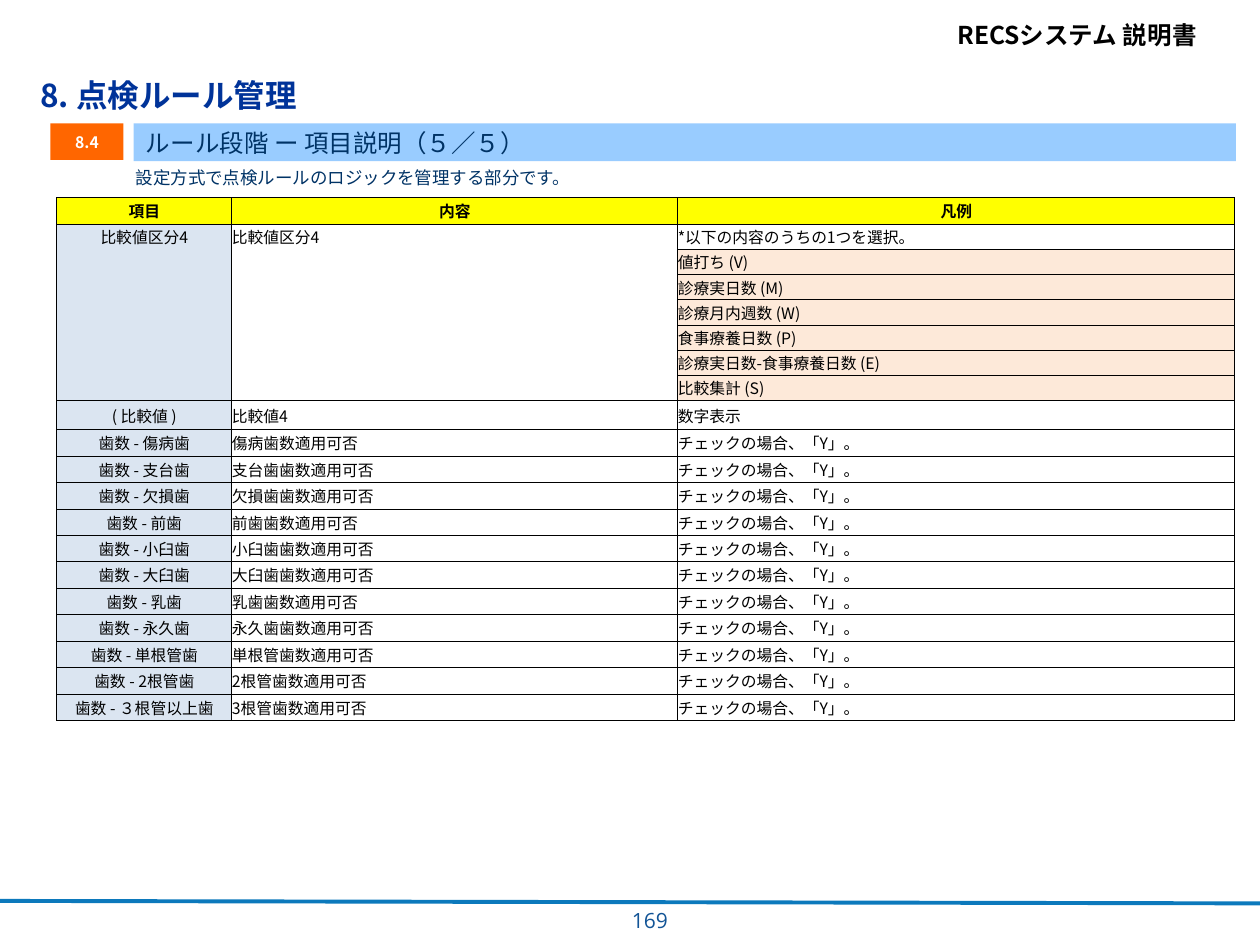
from lxml.etree import SubElement
from pptx import Presentation
from pptx.dml.color import RGBColor
from pptx.enum.shapes import MSO_CONNECTOR, MSO_SHAPE
from pptx.enum.text import MSO_ANCHOR as ANCHOR, MSO_AUTO_SIZE, PP_ALIGN as ALIGN
from pptx.oxml.ns import qn
from pptx.util import Inches, Pt

SANS, PAGE_FONT = "Noto Sans CJK JP", "Open Sans"
BLACK, WHITE = RGBColor(0, 0, 0), RGBColor(255, 255, 255)
NAVY, INK = RGBColor(0x00, 0x33, 0x99), RGBColor(0x00, 0x33, 0x66)
RULE, PAGE = RGBColor(0x0C, 0x79, 0xBC), RGBColor(0x12, 0x54, 0x96)
ORANGE, SKY = RGBColor(0xFF, 0x66, 0x00), RGBColor(0x99, 0xCC, 0xFF)
YELLOW, PALE = RGBColor(0xFF, 0xFF, 0x00), RGBColor(0xDB, 0xE5, 0xF1)
PEACH = RGBColor(0xFD, 0xE9, 0xD9)

HEAD = ("項目", "内容", "凡例")
CHOICES = ["値打ち (V)", "診療実日数 (M)", "診療月内週数 (W)", "食事療養日数 (P)",
           "診療実日数-食事療養日数 (E)", "比較集計 (S)"]
TEETH = [
    ("傷病歯", "傷病歯数"), ("支台歯", "支台歯歯数"), ("欠損歯", "欠損歯歯数"),
    ("前歯", "前歯歯数"), ("小臼歯", "小臼歯歯数"), ("大臼歯", "大臼歯歯数"),
    ("乳歯", "乳歯歯数"), ("永久歯", "永久歯歯数"), ("単根管歯", "単根管歯数"),
    ("2根管歯", "2根管歯数"), ("３根管以上歯", "3根管歯数"),
]
ROWS = [HEAD, ("比較値区分4", "比較値区分4", "*以下の内容のうちの1つを選択。")]
ROWS += [("", "", choice) for choice in CHOICES]
ROWS += [("( 比較値 )", "比較値4", "数字表示")]
ROWS += [(f"歯数 - {tooth}", f"{count}適用可否", "チェックの場合、「Y」。")
         for tooth, count in TEETH]
COLS = (1.39, 3.54, 4.42)
LAST = 1 + len(CHOICES)  # last row of the group of choices
HIGH = [0.21] + [0.2] * LAST + [0.23] + [0.21] * len(TEETH)


def write(frame, text, size, color, bold=False, align=ALIGN.LEFT, font=SANS):
    frame.text = text
    para = frame.paragraphs[0]
    para.alignment = align
    for run in para.runs:
        run.font.size, run.font.bold, run.font.name = Pt(size), bold, font
        run.font.color.rgb = color
        SubElement(run.font._element, qn("a:ea"), typeface=font)
    if not text:
        SubElement(para._p, qn("a:endParaRPr"), sz=str(size * 100))


def text_box(slide, box, *args, wrap=True, **style):
    frame = slide.shapes.add_textbox(*map(Inches, box)).text_frame
    frame.word_wrap = wrap
    write(frame, *args, **style)


def block(slide, box, fill, *args, anchor=ANCHOR.MIDDLE, **style):
    shape = slide.shapes.add_shape(MSO_SHAPE.RECTANGLE, *map(Inches, box))
    shape.shadow.inherit = False
    shape.fill.solid()
    shape.fill.fore_color.rgb = fill
    shape.line.fill.background()
    shape.text_frame.word_wrap = True
    shape.text_frame.vertical_anchor = anchor
    write(shape.text_frame, *args, **style)
    return shape


def edge(cell, hidden):
    """Draw thin black borders, leaving out the sides in hidden."""
    props = cell._tc.get_or_add_tcPr()
    for spot, side in enumerate("LRTB"):
        line = props.makeelement(qn(f"a:ln{side}"), {"w": str(Pt(0.5))})
        props.insert(spot, line)
        if side in hidden:
            SubElement(line, qn("a:noFill"))
        else:
            fill = SubElement(line, qn("a:solidFill"))
            SubElement(fill, qn("a:srgbClr"), val=str(BLACK))


def add_rules(slide):
    table = slide.shapes.add_table(
        len(ROWS), len(COLS), Inches(0.45), Inches(1.57),
        Inches(sum(COLS)), Inches(sum(HIGH))).table
    for col, width in zip(table.columns, COLS):
        col.width = Inches(width)
    for r, texts in enumerate(ROWS):
        table.rows[r].height = Inches(HIGH[r])
        for c, text in enumerate(texts):
            cell = table.cell(r, c)
            cell.margin_left = cell.margin_right = 0
            cell.margin_top = cell.margin_bottom = 0
            cell.vertical_anchor = ANCHOR.MIDDLE
            cell.fill.solid()
            choice = c == 2 and 1 < r <= LAST
            cell.fill.fore_color.rgb = (
                YELLOW if r == 0 else PALE if c == 0 else PEACH if choice else WHITE)
            align = ALIGN.CENTER if r == 0 or c == 0 else ALIGN.LEFT
            write(cell.text_frame, text, 9, BLACK, r == 0, align)
            hidden = ""
            if c < 2 and 1 <= r <= LAST:
                hidden = ("T" if r > 1 else "") + ("B" if r < LAST else "")
            edge(cell, hidden)


def main():
    deck = Presentation()
    deck.slide_width, deck.slide_height = Inches(10), Inches(7.5)
    slide = deck.slides.add_slide(deck.slide_layouts[5])

    title = slide.shapes.title
    title.left, title.top, title.width, title.height = map(
        Inches, (0.22, 0.6, 9.74, 0.42))
    frame = title.text_frame
    frame.auto_size = MSO_AUTO_SIZE.NONE
    frame.margin_top = frame.margin_bottom = 0
    frame.vertical_anchor = ANCHOR.TOP
    write(frame, "8. 点検ルール管理", 18, NAVY, bold=True)

    rule = slide.shapes.add_connector(
        MSO_CONNECTOR.STRAIGHT, *map(Inches, (0, 7.15, 10, 7.17)))
    rule.line.color.rgb, rule.line.width = RULE, Pt(2.25)
    SubElement(rule._element.spPr, qn("a:effectLst"))

    text_box(slide, (7.5, 0.11, 2.16, 0.34), "RECSシステム 説明書", 14, BLACK,
             bold=True, wrap=False)
    text_box(slide, (4.87, 7.15, 0.53, 0.28), "169", 12, PAGE,
             align=ALIGN.RIGHT, font=PAGE_FONT)
    add_rules(slide)
    note = block(slide, (0.98, 1.28, 8.63, 0.27), WHITE,
                 "設定方式で点検ルールのロジックを管理する部分です。", 10, INK,
                 anchor=ANCHOR.TOP)
    note.text_frame.paragraphs[0].space_after = Pt(3)
    block(slide, (0.4, 0.98, 0.58, 0.29), ORANGE, "8.4", 9, WHITE,
          bold=True, align=ALIGN.CENTER)
    block(slide, (1.06, 0.98, 8.75, 0.3), SKY,
          "ルール段階 ー 項目説明（５／５）", 14, INK)
    deck.save("out.pptx")


if __name__ == "__main__":
    main()
